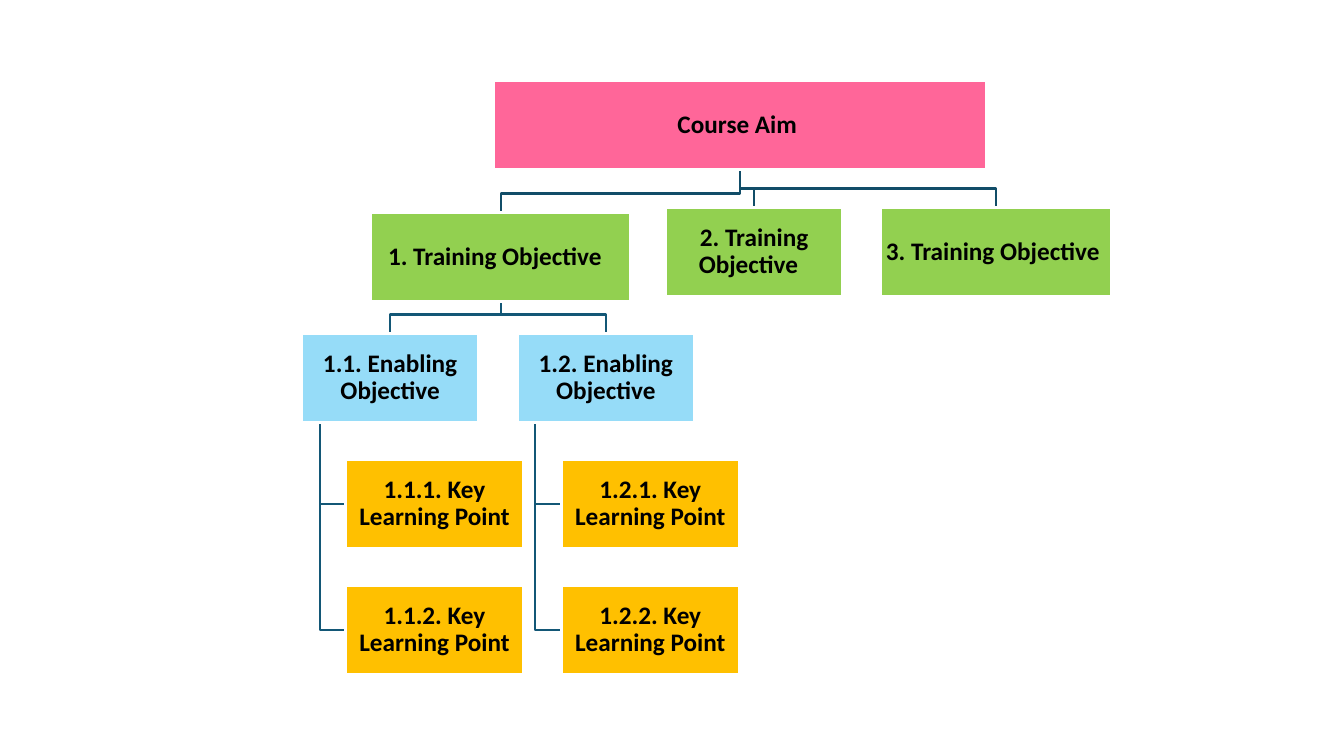
from pptx import Presentation
from pptx.dml.color import RGBColor
from pptx.enum.shapes import MSO_SHAPE
from pptx.enum.text import MSO_ANCHOR, PP_ALIGN
from pptx.util import Inches, Pt

RECT = MSO_SHAPE.RECTANGLE
MIDDLE = MSO_ANCHOR.MIDDLE
CENTER = PP_ALIGN.CENTER

COLORS = {
    "aim": "FF6699", "goal": "92D050", "skill": "96DCF8", "point": "FFC000",
    "edge": "FFFFFF", "text": "000000", "upper": "114D68", "lower": "135776",
}
FONT = {"name": "Calibri", "size": Pt(18), "bold": True}
FRAME = {"word_wrap": True, "vertical_anchor": MIDDLE}
PARA = {"alignment": CENTER, "line_spacing": 0.9}
SIDES = ("margin_left", "margin_top", "margin_right", "margin_bottom")

WIDE, HIGH = 1.76, 0.88   # standard box
BEND = 0.19               # elbow height above a child
STEP = 1.25               # row pitch below a skill
SHIFT = 0.44              # indent of a key point
SPINE = 0.18              # indent of the vertical line


def color(key):
    return RGBColor.from_string(COLORS[key])


def apply(item, values):
    for name, value in values.items():
        setattr(item, name, value)


def draw_box(slide, box, label, kind):
    shape = slide.shapes.add_shape(RECT, *(Inches(v) for v in box))
    shape.shadow.inherit = False
    shape.fill.solid()
    shape.fill.fore_color.rgb = color(kind)
    shape.line.color.rgb = color("edge")
    shape.line.width = Pt(2)
    frame = shape.text_frame
    apply(frame, FRAME)
    apply(frame, {side: Inches(0.01) for side in SIDES})
    para = frame.paragraphs[0]
    apply(para, PARA)
    run = para.add_run()
    run.text = label
    apply(run.font, FONT)
    run.font.color.rgb = color("text")


def draw_path(slide, points, key):
    first, *rest = [(Inches(x), Inches(y)) for x, y in points]
    pen = slide.shapes.build_freeform(*first)
    pen.add_line_segments(rest, close=False)
    shape = pen.convert_to_shape()
    shape.shadow.inherit = False
    shape.fill.background()
    shape.line.color.rgb = color(key)
    shape.line.width = Pt(1.5)


def link_down(slide, upper, child, key):
    """Run from the foot of one box to the head of another."""
    start = upper[0] + upper[2] / 2
    end = child[0] + child[2] / 2
    bend = child[1] - BEND
    draw_path(slide, [(start, upper[1] + upper[3]), (start, bend),
                      (end, bend), (end, child[1])], key)


def draw_skill(slide, box, number, count=2):
    """An enabling objective with its key learning points."""
    left, top, wide, high = box
    spine = left + SPINE
    points = [(left + SHIFT, top + STEP * i, wide, high)
              for i in range(1, count + 1)]
    for x, y, _, tall in points:
        mid = y + tall / 2
        draw_path(slide, [(spine, top + high), (spine, mid), (x, mid)], "lower")
    draw_box(slide, box, f"{number}. Enabling Objective", "skill")
    for i, point in enumerate(points, 1):
        draw_box(slide, point, f"{number}.{i}. Key Learning Point", "point")


def draw_goals(slide, aim, goals):
    """The course aim with its training objectives."""
    for box, _ in goals:
        link_down(slide, aim, box, "upper")
    draw_box(slide, aim, "Course Aim ", "aim")
    for box, label in goals:
        draw_box(slide, box, label, "goal")


def main():
    deck = Presentation()
    deck.slide_width, deck.slide_height = Inches(13.33), Inches(7.5)
    slide = deck.slides.add_slide(deck.slide_layouts[6])

    aim = (4.9, 0.8, 4.88, HIGH)
    goals = [
        ((3.68, 2.11, 2.57, HIGH), "1. Training Objective  "),
        ((6.6, 2.06, WIDE, HIGH), "2. Training Objective  "),
        ((8.73, 2.06, 2.29, HIGH), "3. Training Objective "),
    ]

    # Lower levels, under the first training objective
    for i, left in enumerate((2.99, 5.13), 1):
        box = (left, 3.31, WIDE, HIGH)
        link_down(slide, goals[0][0], box, "lower")
        draw_skill(slide, box, f"1.{i}")

    # Upper levels
    draw_goals(slide, aim, goals)
    deck.save("out.pptx")


if __name__ == "__main__":
    main()
